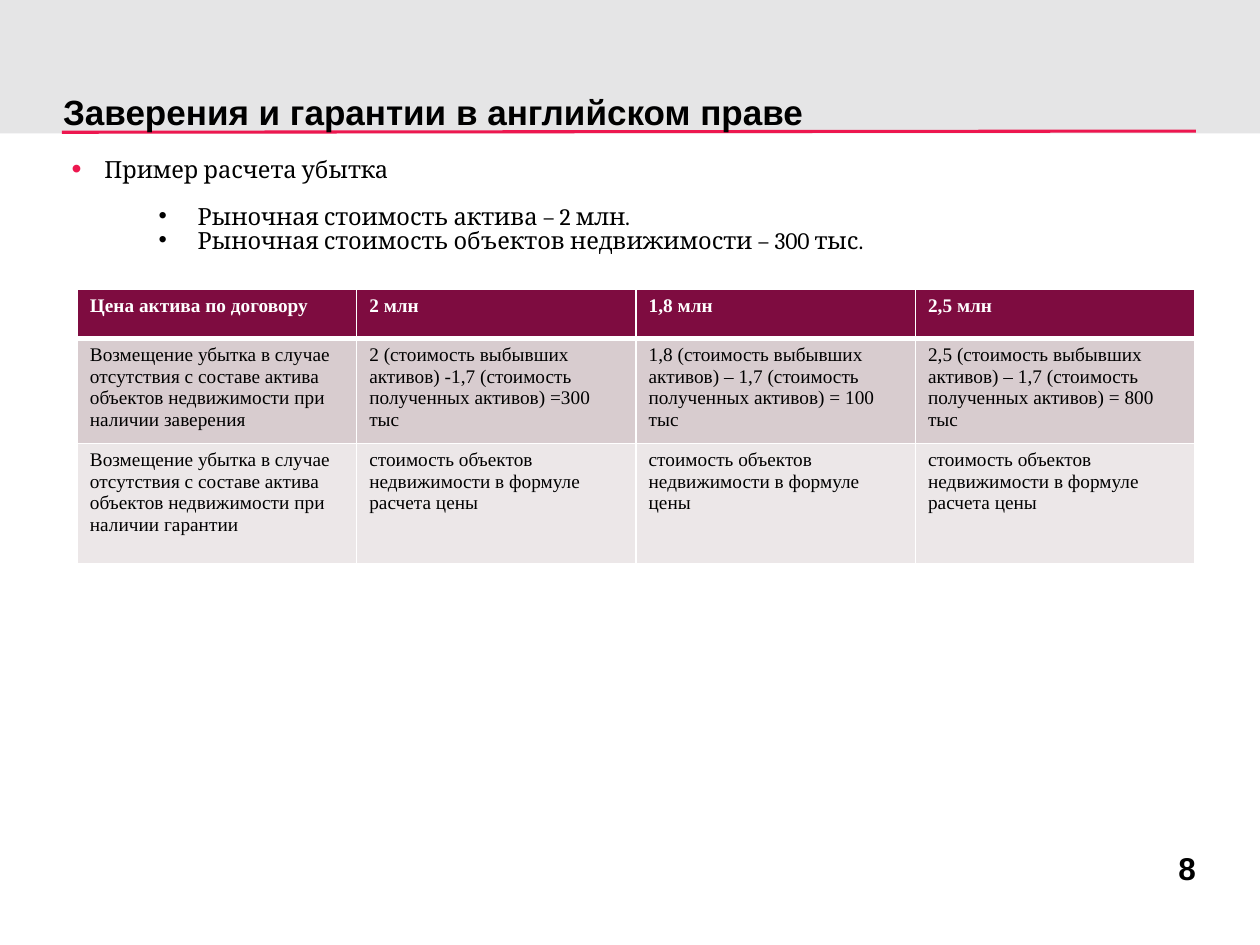
import pptx
import pptx.util
import pptx.dml.color
import pptx.enum.shapes
import pptx.enum.text
import pptx.oxml
import pptx.oxml.ns
from lxml import etree

Pt = pptx.util.Pt
Align = pptx.enum.text.PP_ALIGN
Anchor = pptx.enum.text.MSO_ANCHOR
qn = pptx.oxml.ns.qn


def tint(code):
    return pptx.dml.color.RGBColor.from_string(code)


class Deck:
    black, white, red = "000000", "FFFFFF", "ED174F"
    head, body, grid = "Arial", "Cambria", "Times New Roman"

    def __init__(self, wide, high):
        self.show = pptx.Presentation()
        self.show.slide_width = Pt(wide)
        self.show.slide_height = Pt(high)
        self.slide = self.show.slides.add_slide(self.show.slide_layouts[6])

    def style(self, para, face, size, color, bold=False):
        for run in para.runs:
            run.font.name = face
            run.font.size = Pt(size)
            run.font.bold = bold
            run.font.color.rgb = tint(color)

    def band(self, x, y, w, h, color):
        rect = self.slide.shapes.add_shape(
            pptx.enum.shapes.MSO_SHAPE.RECTANGLE, Pt(x), Pt(y), Pt(w), Pt(h))
        rect.shadow.inherit = False
        rect.fill.solid()
        rect.fill.fore_color.rgb = tint(color)
        rect.line.fill.background()

    def rule(self, x1, y1, x2, y2, color, width):
        line = self.slide.shapes.add_connector(
            pptx.enum.shapes.MSO_CONNECTOR.STRAIGHT, Pt(x1), Pt(y1), Pt(x2), Pt(y2))
        line.line.color.rgb = tint(color)
        line.line.width = Pt(width)
        etree.SubElement(line._element.spPr, qn("a:effectLst"))

    def frame(self, x, y, w, h, anchor):
        box = self.slide.shapes.add_textbox(Pt(x), Pt(y), Pt(w), Pt(h))
        text = box.text_frame
        text.word_wrap = True
        text.vertical_anchor = anchor
        text.margin_left = text.margin_right = 0
        text.margin_top = text.margin_bottom = 0
        return text

    def label(self, x, y, w, h, words, size, align=Align.LEFT):
        para = self.frame(x, y, w, h, Anchor.BOTTOM).paragraphs[0]
        para.text = words
        para.alignment = align
        self.style(para, self.head, size, self.black, True)

    def bullet(self, para, left, hang, color, scale):
        props = para._p.get_or_add_pPr()
        props.set("marL", str(Pt(left)))
        props.set("indent", str(-Pt(hang)))
        tone = etree.SubElement(props, qn("a:buClr"))
        etree.SubElement(tone, qn("a:srgbClr"), val=color)
        etree.SubElement(props, qn("a:buSzPct"), val=str(scale * 1000))
        etree.SubElement(props, qn("a:buFont"), typeface="Arial")
        etree.SubElement(props, qn("a:buChar"), char="•")

    def points(self, x, y, w, h, items):
        text = self.frame(x, y, w, h, Anchor.TOP)
        for i, (words, gap, left, hang, color, scale) in enumerate(items):
            para = text.add_paragraph() if i else text.paragraphs[0]
            para.text = words
            self.bullet(para, left, hang, color, scale)
            para.line_spacing = 0.75
            para.space_before = Pt(gap)
            self.style(para, self.body, 13.5, self.black)

    def edge(self, cell, base):
        props = cell._tc.get_or_add_tcPr()
        sides = (("L", 1), ("R", 1), ("T", base[0]), ("B", base[1]))
        for i, (side, width) in enumerate(sides):
            line = etree.Element(qn("a:ln" + side), w=str(Pt(width)))
            fill = etree.SubElement(line, qn("a:solidFill"))
            etree.SubElement(fill, qn("a:srgbClr"), val=self.white)
            props.insert(i, line)

    def table(self, x, y, w, highs, rows, fills):
        cols = len(rows[0])
        grid = self.slide.shapes.add_table(
            len(rows), cols, Pt(x), Pt(y), Pt(w), Pt(sum(highs))).table
        for col in grid.columns:
            col.width = Pt(w / cols)
        for r, row in enumerate(rows):
            grid.rows[r].height = Pt(highs[r])
            top = r == 0
            for c, words in enumerate(row):
                cell = grid.cell(r, c)
                cell.text_frame.text = words
                cell.fill.solid()
                cell.fill.fore_color.rgb = tint(fills[r])
                self.edge(cell, (3 if r == 1 else 1, 3 if top else 1))
                self.style(cell.text_frame.paragraphs[0], self.grid, 11,
                           self.white if top else self.black, top)


def main():
    deck = Deck(720, 540)
    deck.band(0, 0, 720, 76.3, "E5E5E6")
    deck.rule(35.3, 75.6, 683.3, 74.9, deck.red, 1.75)
    deck.label(36, 28, 646, 47.5, "Заверения и гарантии в английском праве", 20)
    deck.points(41, 92.2, 652, 324, [
        ("Пример расчета убытка", 0, 18.7, 18.7, deck.red, 120),
        ("Рыночная стоимость актива – 2 млн.", 15, 72, 22.3, deck.black, 100),
        ("Рыночная стоимость объектов недвижимости – 300 тыс.", 1.5, 72, 22.3,
         deck.black, 100),
    ])
    loss = ("Возмещение убытка в случае отсутствия с составе актива "
            "объектов недвижимости при наличии ")
    cost = "стоимость объектов недвижимости в формуле "
    deck.table(44.2, 165, 638.6, [28.3, 56.4, 69], [
        ["Цена актива по договору", "2 млн", "1,8 млн", "2,5 млн"],
        [loss + "заверения",
         "2 (стоимость выбывших активов) -1,7 (стоимость полученных активов) =300 тыс",
         "1,8 (стоимость выбывших активов) – 1,7 (стоимость полученных активов) = 100 тыс",
         "2,5 (стоимость выбывших активов) – 1,7 (стоимость полученных активов) = 800 тыс"],
        [loss + "гарантии", cost + "расчета цены", cost + "цены", cost + "расчета цены"],
    ], ["7E0C40", "D8CCCF", "ECE7E8"])
    deck.label(540, 471, 143.3, 36, "8", 18, Align.RIGHT)
    deck.show.save("out.pptx")


if __name__ == "__main__":
    main()
